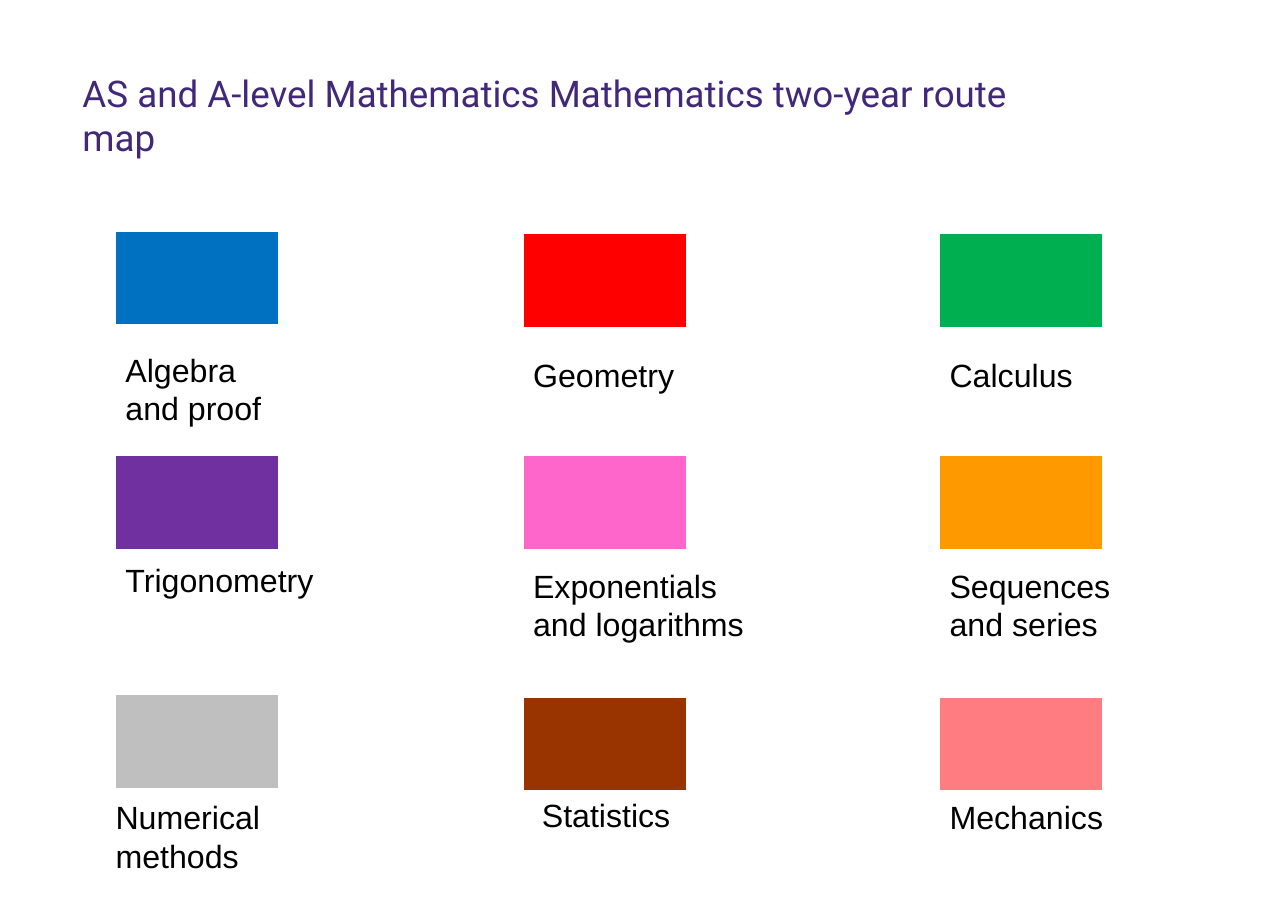
from pptx import Presentation
from pptx.dml.color import RGBColor
from pptx.enum.shapes import MSO_SHAPE
from pptx.util import Pt

RECTANGLE = MSO_SHAPE.RECTANGLE
PX = 9144
PAGE_SIZE = (1169, 827)
TITLE_BOX = (65, 59, 908, 131)
SWATCH_SIZE = (150, 87)
COLUMN_LEFTS = (104, 474, 852)

# label: left shift from the swatch, top, width, height
TOPIC_ROWS = [
    [
        (["Algebra and proof"], "0070C0", 209, (0, 313, 150, 81)),
        (["Geometry"], "FF0000", 211, (0, 318, 197, 45)),
        (["Calculus"], "00B050", 211, (0, 318, 150, 45)),
    ],
    [
        (["Trigonometry"], "7030A0", 413, (0, 504, 205, 45)),
        (["Exponentials and logarithms"], "FF66CC", 413, (0, 509, 214, 81)),
        (["Sequences and series"], "FF9900", 413, (0, 509, 185, 81)),
    ],
    [
        (["Numerical", "methods"], "BFBFBF", 630, (-9, 719, 182, 81)),
        (["Statistics"], "993300", 632, (8, 717, 150, 45)),
        (["Mechanics"], "FF7C80", 632, (0, 719, 170, 45)),
    ],
]


def color(value):
    return RGBColor.from_string(value)


def scaled(box):
    return [length * PX for length in box]


def add_text(page, box, lines, size, font_name, font_color):
    frame = page.shapes.add_textbox(*scaled(box)).text_frame
    frame.word_wrap = True
    for index, line in enumerate(lines):
        para = frame.add_paragraph() if index else frame.paragraphs[0]
        span = para.add_run()
        span.text = line
        span.font.size = Pt(size)
        span.font.name = font_name
        span.font.color.rgb = color(font_color)


def add_swatch(page, box, fill):
    swatch = page.shapes.add_shape(RECTANGLE, *scaled(box))
    swatch.shadow.inherit = False
    swatch.fill.solid()
    swatch.fill.fore_color.rgb = color(fill)
    swatch.line.color.rgb = color("FFFFFF")
    swatch.line.width = Pt(2)


def add_topic(page, left, topic):
    lines, fill, top, (shift, label_top, width, height) = topic
    add_swatch(page, (left, top, *SWATCH_SIZE), fill)
    label_box = (left + shift, label_top, width, height)
    add_text(page, label_box, lines, 21, "Arial", "000000")


def main():
    deck = Presentation()
    deck.slide_width, deck.slide_height = scaled(PAGE_SIZE)
    page = deck.slides.add_slide(deck.slide_layouts[6])
    title = "AS and A-level Mathematics Mathematics two-year route map"
    add_text(page, TITLE_BOX, [title], 24, "Roboto", "412878")
    for row in TOPIC_ROWS:
        for left, topic in zip(COLUMN_LEFTS, row):
            add_topic(page, left, topic)
    deck.save("out.pptx")


if __name__ == "__main__":
    main()
